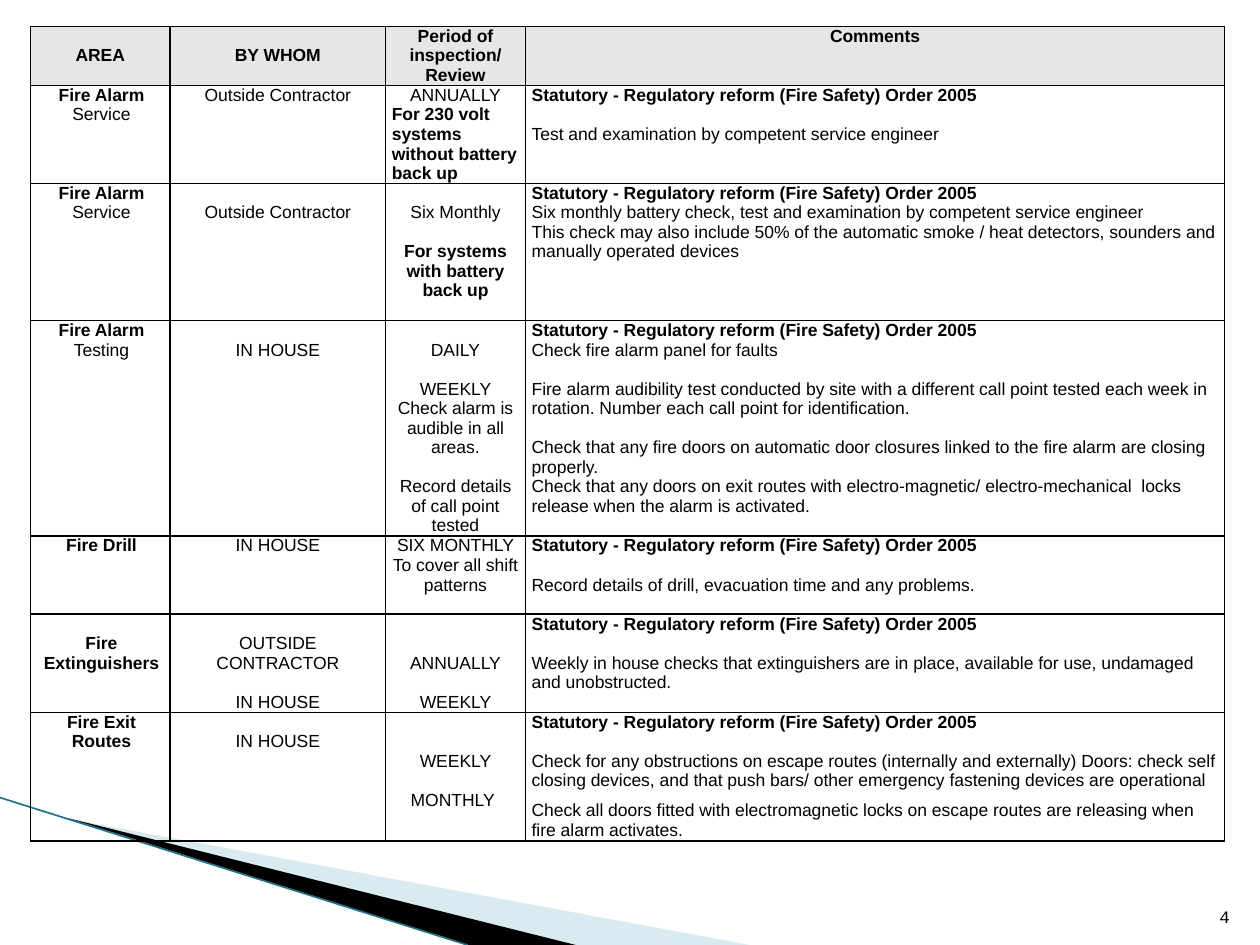
from dataclasses import dataclass

from pptx import Presentation
from pptx import util as u
from pptx.dml import color
from pptx.enum import shapes, text
from pptx.oxml import parse_xml
from pptx.oxml import ns

LINE = 11.17  # height of one text line, in points
LEFT, CENTER, RIGHT = text.PP_ALIGN.LEFT, text.PP_ALIGN.CENTER, text.PP_ALIGN.RIGHT
COLUMNS = [1.11, 1.71, 1.11, 5.55]
ROWS = [0.47, 0.77, 1.09, 1.71, 0.62, 0.78, 1.02]


@dataclass
class Para:
    words: str
    bold: bool = False
    tail: str = ""  # regular words after the bold ones
    gap: float = 0  # space above, in points
    align: text.PP_ALIGN = CENTER
    indent: float = 0


@dataclass
class Wedge:
    points: list[tuple[float, float]]
    fill: str
    opacity: int


def head(words: str, gap: float = 0) -> list[Para]:
    return [Para(words, bold=True, gap=gap)]


def area(words: str, tail: str = "") -> list[Para]:
    return [Para(words, bold=True, tail=tail, indent=0.02)]


def comments(*notes: tuple[str, float]) -> list[Para]:
    order = Para("Statutory - Regulatory reform (Fire Safety) Order 2005",
                 bold=True, align=LEFT)
    return [order] + [Para(words, gap=gap, align=LEFT) for words, gap in notes]


SCHEDULE = [
    [head("AREA", LINE), head("BY WHOM", LINE),
     head("Period of inspection/ Review"), head("Comments")],
    [area("Fire Alarm", " Service"),
     [Para("Outside Contractor")],
     [Para("ANNUALLY"),
      Para("For 230 volt systems without battery back up", bold=True, align=LEFT)],
     comments(("Test and examination by competent service engineer", LINE))],
    [area("Fire Alarm", " Service"),
     [Para("Outside Contractor", gap=LINE)],
     [Para("Six Monthly", gap=LINE),
      Para("For systems with battery back up", bold=True, gap=LINE)],
     comments(
         ("Six monthly battery check, test and examination by competent "
          "service engineer", 0),
         ("This check may also include 50% of the automatic smoke / heat "
          "detectors, sounders and manually operated devices", 0))],
    [area("Fire Alarm", " Testing"),
     [Para("IN HOUSE", gap=LINE)],
     [Para("DAILY", gap=LINE), Para("WEEKLY", gap=LINE),
      Para("Check alarm is audible in all areas."),
      Para("Record details of call point tested", gap=LINE)],
     comments(
         ("Check fire alarm panel for faults", 0),
         ("Fire alarm audibility test conducted by site with a different call "
          "point tested each week in rotation. Number each call point for "
          "identification.", LINE),
         ("Check that any fire doors on automatic door closures linked to the "
          "fire alarm are closing properly.", LINE),
         ("Check that any doors on exit routes with electro-magnetic/ "
          "electro-mechanical  locks release when the alarm is activated.", 0))],
    [area("Fire Drill"),
     [Para("IN HOUSE")],
     [Para("SIX MONTHLY"), Para("To cover all shift patterns")],
     comments(("Record details of drill, evacuation time and any problems.", LINE))],
    [[Para("Fire", bold=True, gap=LINE, indent=0.02),
      Para("Extinguishers", bold=True, indent=0.02)],
     [Para("OUTSIDE CONTRACTOR", gap=LINE), Para("IN HOUSE", gap=LINE)],
     [Para("ANNUALLY", gap=2 * LINE), Para("WEEKLY", gap=LINE)],
     comments(("Weekly in house checks that extinguishers are in place, available "
               "for use, undamaged and unobstructed.", LINE))],
    [area("Fire Exit Routes"),
     [Para("IN HOUSE", gap=LINE)],
     [Para("WEEKLY", gap=2 * LINE),
      Para("MONTHLY", gap=LINE, align=LEFT, indent=0.15)],
     comments(
         ("Check for any obstructions on escape routes (internally and externally) "
          "Doors: check self closing devices, and that push bars/ other emergency "
          "fastening devices are operational", LINE),
         ("Check all doors fitted with electromagnetic locks on escape routes are "
          "releasing when fire alarm activates.", 6))],
]

WEDGES = [
    Wedge([(0.55, 6.5), (5.95, 7.5), (4.56, 7.5)], "A0CBDC", 40),
    Wedge([(0.53, 6.49), (4.57, 7.5), (3.72, 7.5)], "000000", 100),
]


def paint(target, hex_color: str) -> None:
    """Give a fill one solid colour."""
    target.solid()
    target.fore_color.rgb = color.RGBColor.from_string(hex_color)


def add_text(para, words: str, *, bold: bool = False, font: str = "Arial",
             size: float = 10, ink: str = "000000") -> None:
    span = para.add_run()
    span.text = words
    span.font.name, span.font.size, span.font.bold = font, u.Pt(size), bold
    paint(span.font.fill, ink)


def add_wedge(page, wedge: Wedge) -> None:
    points = [(u.Inches(x), u.Inches(y)) for x, y in wedge.points]
    builder = page.shapes.build_freeform(*points[0])
    builder.add_line_segments(points[1:], close=True)
    shape = builder.convert_to_shape()
    shape.shadow.inherit = False
    shape.line.fill.background()
    paint(shape.fill, wedge.fill)
    if wedge.opacity < 100:
        tint = shape.fill._xPr.find(".//" + ns.qn("a:srgbClr"))
        tint.append(parse_xml(
            f'<a:alpha {ns.nsdecls("a")} val="{wedge.opacity * 1000}"/>'))


def add_borders(cell) -> None:
    for side in "LRTB":
        cell._tc.get_or_add_tcPr().append(parse_xml(
            f'<a:ln{side} {ns.nsdecls("a")} w="12700"><a:solidFill>'
            f'<a:srgbClr val="000000"/></a:solidFill></a:ln{side}>'))


def fill_cell(cell, paras: list[Para], shade: str | None) -> None:
    cell.margin_left = cell.margin_right = u.Inches(0.05)
    cell.margin_top, cell.margin_bottom = u.Pt(paras[0].gap), 0
    add_borders(cell)
    if shade:
        paint(cell.fill, shade)
    else:
        cell.fill.background()
    for index, item in enumerate(paras):
        para = cell.text_frame.add_paragraph() if index else cell.text_frame.paragraphs[0]
        para.alignment = item.align
        if index:
            para.space_before = u.Pt(item.gap)
        if item.indent:
            para._p.get_or_add_pPr().set("marL", str(u.Inches(item.indent)))
        add_text(para, item.words, bold=item.bold)
        if item.tail:
            add_text(para, item.tail)


def add_schedule(page) -> None:
    frame = page.shapes.add_table(
        len(ROWS), len(COLUMNS), u.Inches(0.24), u.Inches(0.21),
        u.Inches(sum(COLUMNS)), u.Inches(sum(ROWS)))
    table = frame.table
    table.first_row = table.horz_banding = False
    for column, width in zip(table.columns, COLUMNS):
        column.width = u.Inches(width)
    for r, (height, cells) in enumerate(zip(ROWS, SCHEDULE)):
        table.rows[r].height = u.Inches(height)
        for c, paras in enumerate(cells):
            fill_cell(table.cell(r, c), paras, None if r else "E6E6E6")


def main() -> None:
    deck = Presentation()
    deck.slide_width, deck.slide_height = u.Inches(10), u.Inches(7.5)
    page = deck.slides.add_slide(deck.slide_layouts[6])

    # Corner decoration
    for wedge in WEDGES:
        add_wedge(page, wedge)
    edge = page.shapes.add_connector(
        shapes.MSO_CONNECTOR.STRAIGHT,
        u.Inches(0), u.Inches(6.33), u.Inches(3.71), u.Inches(7.5))
    edge.line.width = u.Pt(0.95)
    paint(edge.line.fill, "1F7388")
    edge._element.spPr.append(parse_xml(f'<a:effectLst {ns.nsdecls("a")}/>'))

    # Inspection schedule
    add_schedule(page)

    # Page number
    box = page.shapes.add_textbox(
        u.Inches(9.46), u.Inches(7.01), u.Inches(0.4), u.Inches(0.4))
    box.text_frame.word_wrap = True
    box.text_frame.vertical_anchor = text.MSO_ANCHOR.BOTTOM
    number = box.text_frame.paragraphs[0]
    number.alignment = RIGHT
    add_text(number, "4", font="Courier New")

    deck.save("out.pptx")


if __name__ == "__main__":
    main()
